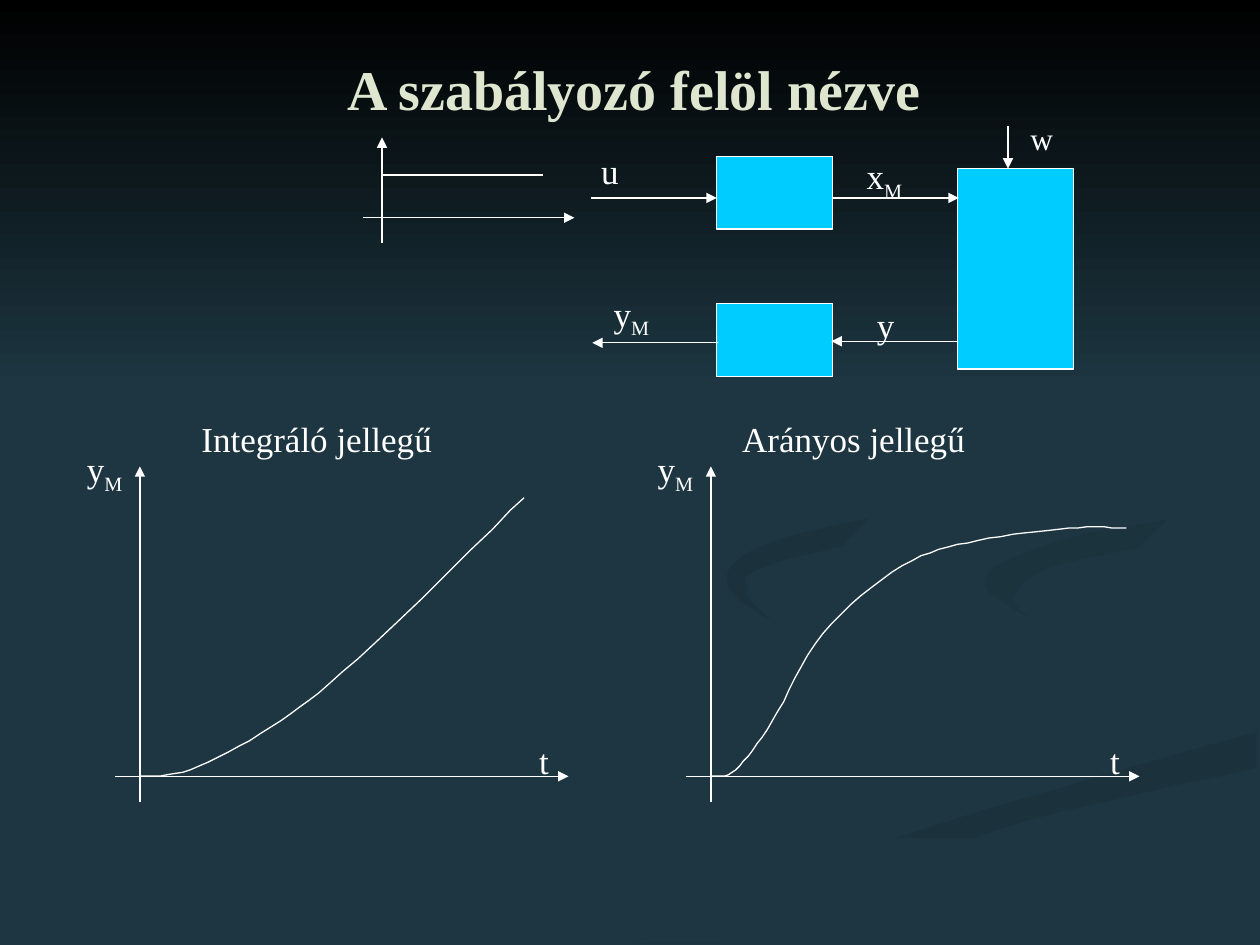
from lxml.etree import SubElement
from pptx import Presentation
from pptx.dml.color import RGBColor
from pptx.enum.shapes import MSO_CONNECTOR, MSO_SHAPE
from pptx.enum.text import MSO_ANCHOR, MSO_AUTO_SIZE, PP_ALIGN
from pptx.oxml.ns import qn
from pptx.util import Cm, Pt

WHITE, CYAN, NIGHT = "FFFFFF", "00CCFF", "1D3641"
GRID = Cm(0.0254)
STEPS = 8

RIBBONS = [
    ([(575, 459), (614, 496), (767, 547), (800, 581), (756, 614), (564, 665), (361, 749)],
     [(300, 749), (499, 661), (739, 598), (786, 566), (631, 505), (575, 459)],
     NIGHT, "1C343E", 0),
    ([(724, 464), (745, 490), (905, 540), (943, 570), (894, 605)],
     [(894, 605), (918, 581), (838, 536), (755, 505), (724, 464)],
     NIGHT, "1C343E", 45),
    ([(503, 749), (630, 693), (797, 638), (998, 581)],
     [(998, 609), (785, 661), (571, 749)],
     "1B323C", NIGHT, 90),
    ([(826, 496), (781, 460), (849, 427), (998, 402)],
     [(998, 420), (843, 448), (805, 475), (826, 496)],
     "1B333D", NIGHT, 45),
    ([(762, 233), (864, 291), (893, 335), (855, 391), (624, 444), (593, 470), (622, 500)],
     [(622, 500), (577, 462), (625, 426), (842, 378), (889, 335), (762, 233)],
     "1B323C", NIGHT, 45),
]

INTEGRATING = [(111, 616), (151, 611), (215, 577), (284, 523), (416, 395)]
PROPORTIONAL = [(564, 616), (584, 611), (613, 572), (653, 503), (716, 449), (776, 429),
                (849, 419), (894, 419)]


def color(value):
    """Turn a hex string into a colour."""
    return RGBColor.from_string(value)


def outline(element):
    """Give a shape or connector the thin white line."""
    element.line.color.rgb = color(WHITE)
    element.line.width = Pt(0.75)


def smooth(knots):
    """Return points of a smooth curve through all knots."""
    padded = [knots[0], *knots, knots[-1]]
    points = [knots[0]]
    for a, b, c, d in zip(padded, padded[1:], padded[2:], padded[3:]):
        for step in range(1, STEPS + 1):
            t = step / STEPS
            points.append(tuple(
                q + t / 2 * (r - p + t * (2 * p - 5 * q + 4 * r - s + t * (3 * (q - r) + s - p)))
                for p, q, r, s in zip(a, b, c, d)))
    return points


def freeform(slide, points, close):
    """Build a shape from points on the fine grid."""
    builder = slide.shapes.build_freeform(*points[0], scale=GRID)
    builder.add_line_segments(points[1:], close=close)
    figure = builder.convert_to_shape()
    figure.shadow.inherit = False
    return figure


def shade_gradient(area, first, last, angle):
    """Fill a borderless shape with a two-colour gradient."""
    area.shadow.inherit = False
    area.line.fill.background()
    area.fill.gradient()
    area.fill.gradient_angle = -angle % 360
    for stop, shade in zip(area.fill.gradient_stops, (first, last)):
        stop.color.rgb = color(shade)


def backdrop(slide, width):
    """Draw the dark ribbons and the fading band at the top."""
    slide.background.fill.solid()
    slide.background.fill.fore_color.rgb = color(NIGHT)
    for there, back, *shading in RIBBONS:
        shade_gradient(freeform(slide, smooth(there) + smooth(back), True), *shading)
    sky = slide.shapes.add_shape(MSO_SHAPE.RECTANGLE, 0, 0, width, Cm(7.82))
    shade_gradient(sky, "000000", NIGHT, 90)


def response(slide, knots):
    """Draw a step response as a smooth open line."""
    curve = freeform(slide, smooth(knots), False)
    curve.fill.background()
    outline(curve)


def block(slide, left, top, height, width=2.34):
    """Draw one block of the control loop."""
    unit = slide.shapes.add_shape(MSO_SHAPE.RECTANGLE, Cm(left), Cm(top), Cm(width), Cm(height))
    unit.shadow.inherit = False
    unit.fill.solid()
    unit.fill.fore_color.rgb = color(CYAN)
    outline(unit)


def signal(slide, x, y, dx=0, dy=0, arrow=True):
    """Draw a straight line from a point, with an arrowhead by default."""
    wire = slide.shapes.add_connector(MSO_CONNECTOR.STRAIGHT,
                                      Cm(x), Cm(y), Cm(x + dx), Cm(y + dy))
    outline(wire)
    if arrow:
        SubElement(wire.line._get_or_add_ln(), qn("a:tailEnd"), type="triangle")
    SubElement(wire._element.spPr, qn("a:effectLst"))


def label(slide, text, left, top, width, height=0.84, sub="", size=20, shade=WHITE,
          bold=False, align=PP_ALIGN.LEFT, inset=0.05, wrap=True, anchor=MSO_ANCHOR.TOP):
    """Write text with an optional subscript."""
    caption = slide.shapes.add_textbox(Cm(left), Cm(top), Cm(width), Cm(height))
    frame = caption.text_frame
    frame.word_wrap = wrap
    frame.auto_size = MSO_AUTO_SIZE.SHAPE_TO_FIT_TEXT
    frame.vertical_anchor = anchor
    frame.margin_left = frame.margin_right = Cm(inset)
    frame.margin_top = frame.margin_bottom = 0
    paragraph = frame.paragraphs[0]
    paragraph.alignment = align
    for part in filter(None, (text, sub)):
        run = paragraph.add_run()
        run.text = part
        run.font.name = "Times New Roman"
        run.font.size = Pt(size)
        run.font.bold = bold
        run.font.color.rgb = color(shade)
    if sub:
        run._r.get_or_add_rPr().set("baseline", "-25000")


def axes(slide, x, y, right, up, left=0.51, below=0.51):
    """Draw a pair of axes around an origin."""
    signal(slide, x - left, y, dx=left + right)
    signal(slide, x, y + below, dy=-below - up)


def control_loop(slide):
    """Draw the blocks, their signals and the step input."""
    for top in (3.15, 6.12):
        block(slide, 14.45, top, 1.47)
    block(slide, 19.3, 3.4, 4.04)
    for x in (11.91, 16.79):
        signal(slide, x, 3.99, dx=2.54)
    for x, y in ((14.48, 6.91), (19.3, 6.88)):
        signal(slide, x, y, dx=-2.54)
    signal(slide, 20.32, 2.54, dy=0.86)
    label(slide, "u", 12.07, 3.02, 0.51)
    label(slide, "y", 12.32, 5.89, 0.86, sub="M")
    label(slide, "y", 17.63, 6.12, 0.71)
    label(slide, "x", 17.42, 3.12, 1.04, sub="M")
    label(slide, "w", 20.57, 2.39, 0.71, 0.76, size=18, align=PP_ALIGN.RIGHT)
    axes(slide, 7.7, 4.39, 3.88, 1.62, left=0.38)
    signal(slide, 7.7, 3.53, dx=3.25, arrow=False)


def diagram(slide, heading, heading_left, x, knots, y=15.65):
    """Draw one response diagram with its heading."""
    label(slide, heading, heading_left, 8.41, 6, inset=0)
    axes(slide, x, y, 8.64, 6.25)
    label(slide, "t", x + 8, y - 0.74, 0.51)
    label(slide, "y", x - 1.12, y - 6.63, 0.86, sub="M")
    response(slide, knots)


def main():
    """Build and save the slide."""
    deck = Presentation()
    deck.slide_width, deck.slide_height = Cm(25.4), Cm(19.05)
    slide = deck.slides.add_slide(deck.slide_layouts[6])
    backdrop(slide, deck.slide_width)
    label(slide, "A szabályozó felöl nézve", 6.73, 0.97, 12.12, 1.6, size=32, shade="DFE6D0",
          bold=True, align=PP_ALIGN.CENTER, inset=0.25, wrap=False, anchor=MSO_ANCHOR.MIDDLE)
    control_loop(slide)
    diagram(slide, "Integráló jellegű", 4.06, 2.82, INTEGRATING)
    diagram(slide, "Arányos jellegű", 14.96, 14.33, PROPORTIONAL)
    deck.save("out.pptx")


if __name__ == "__main__":
    main()
